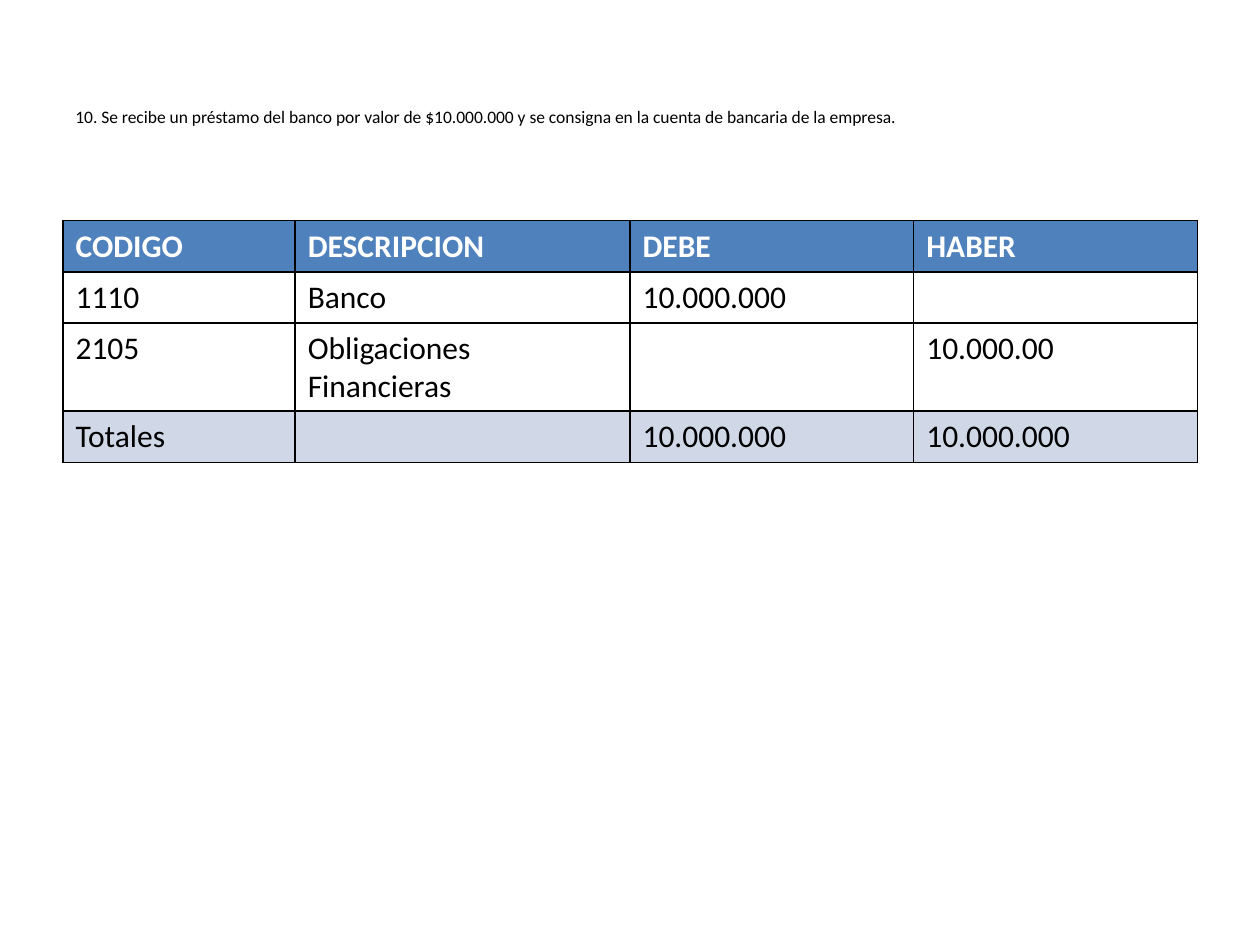
from lxml.etree import SubElement
from pptx import Presentation
from pptx.dml.color import RGBColor
from pptx.enum.text import MSO_ANCHOR, PP_ALIGN
from pptx.oxml.ns import qn
from pptx.util import Cm, Pt

COLORS = {"text": "000000", "border": "000000", "header": "4F81BD",
          "header_text": "FFFFFF", "totals": "D0D8E8"}


def write_text(frame, text, size=18, color="text", bold=False, align=PP_ALIGN.LEFT):
    paragraph = frame.paragraphs[0]
    paragraph.alignment = align
    paragraph.font.size = Pt(size)
    if text:
        run = paragraph.add_run()
        run.text = text
        run.font.name = "Calibri"
        run.font.size = Pt(size)
        run.font.bold = bold
        run.font.color.rgb = RGBColor.from_string(COLORS[color])


def add_borders(cell, width=Pt(1)):
    properties = cell._tc.get_or_add_tcPr()
    for side in ("a:lnL", "a:lnR", "a:lnT", "a:lnB"):
        line = SubElement(properties, qn(side), w=str(width))
        fill = SubElement(line, qn("a:solidFill"))
        SubElement(fill, qn("a:srgbClr"), val=COLORS["border"])


presentation = Presentation()
presentation.slide_width = Cm(25.4)
presentation.slide_height = Cm(19.05)
slide = presentation.slides.add_slide(presentation.slide_layouts[6])

title = slide.shapes.add_textbox(Cm(1.27), Cm(0.76), Cm(22.86), Cm(3.18))
title.text_frame.word_wrap = True
title.text_frame.vertical_anchor = MSO_ANCHOR.MIDDLE
write_text(
    title.text_frame,
    "10. Se recibe un préstamo del banco por valor de $10.000.000 "
    "y se consigna en la cuenta de bancaria de la empresa.",
    size=10, align=PP_ALIGN.JUSTIFY)

entries = [
    ["CODIGO", "DESCRIPCION", "DEBE", "HABER"],
    ["1110", "Banco", "10.000.000", ""],
    ["2105", "Obligaciones Financieras", "", "10.000.00"],
    ["Totales", "", "10.000.000", "10.000.000"],
]
column_widths = [4.68, 6.75, 5.72, 5.72]
row_height = 1.03
row_fills = {0: "header", len(entries) - 1: "totals"}

table = slide.shapes.add_table(
    len(entries), len(column_widths), Cm(1.27), Cm(4.45),
    Cm(sum(column_widths)), Cm(row_height * len(entries))).table
table.first_row = False
table.horz_banding = False
for column, width in zip(table.columns, column_widths):
    column.width = Cm(width)

for row_index, entry in enumerate(entries):
    table.rows[row_index].height = Cm(row_height)
    is_header = row_index == 0
    for column_index, text in enumerate(entry):
        cell = table.cell(row_index, column_index)
        add_borders(cell)
        if row_index in row_fills:
            cell.fill.solid()
            cell.fill.fore_color.rgb = RGBColor.from_string(COLORS[row_fills[row_index]])
        else:
            cell.fill.background()
        write_text(cell.text_frame, text, bold=is_header,
                   color="header_text" if is_header else "text")

presentation.save("out.pptx")
